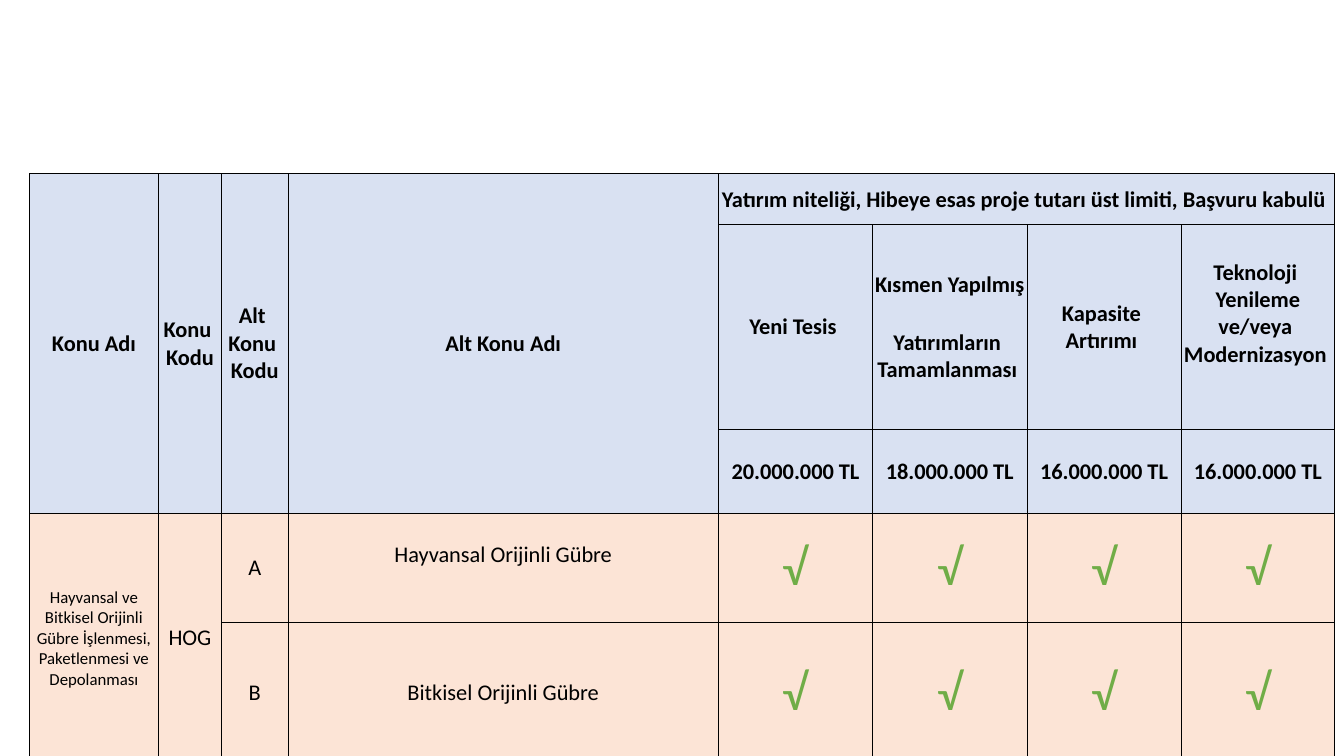
from lxml import etree
from pptx import Presentation
from pptx.dml.color import RGBColor
from pptx.enum.text import MSO_ANCHOR, PP_ALIGN
from pptx.oxml.ns import qn
from pptx.util import Pt

CENTER = PP_ALIGN.CENTER
MIDDLE = MSO_ANCHOR.MIDDLE

BLACK = RGBColor(0x00, 0x00, 0x00)
GREEN = RGBColor(0x70, 0xAD, 0x47)
HEADER_BLUE = RGBColor(0xD9, 0xE1, 0xF2)
BODY_PEACH = RGBColor(0xFC, 0xE4, 0xD6)

FONT = "Calibri"
CHECK = "√"
COLUMN_WIDTHS = [92.2, 45, 47.6, 307.4, 110.2, 110.2, 110.2, 109.6]
ROW_HEIGHTS = [36.5, 146, 60, 78.5, 100]
HEADER_ROWS = 3
FIRST_LIMIT_COLUMN = 4

TOPIC_HEADERS = ["Konu Adı", "Konu \vKodu", "Alt \vKonu \vKodu", "Alt Konu Adı"]
LIMITS_TITLE = "Yatırım niteliği, Hibeye esas proje tutarı üst limiti, Başvuru kabulü "
# Investment type, upper limit, bottom margin of the type cell
INVESTMENTS = [
    ("Yeni Tesis ", "20.000.000 TL", 0),
    ("Kısmen Yapılmış \vYatırımların \vTamamlanması ", "18.000.000 TL", 0),
    ("Kapasite \vArtırımı ", "16.000.000 TL", 0),
    ("Teknoloji \vYenileme ve/veya \vModernizasyon ", "16.000.000 TL", 19.5),
]
TOPIC_NAME = ("Hayvansal ve Bitkisel Orijinli Gübre İşlenmesi, "
              "Paketlenmesi ve Depolanması")
TOPIC_CODE = "HOG"
# Subtopic code, name, bottom margin of the name cell
SUBTOPICS = [
    ("A", "Hayvansal Orijinli Gübre", 20),
    ("B", "Bitkisel Orijinli Gübre", 0),
]


def add_borders(cell):
    properties = cell._tc.get_or_add_tcPr()
    for position, side in enumerate(("lnL", "lnR", "lnT", "lnB")):
        line = etree.Element(qn(f"a:{side}"), w=str(Pt(0.5)))
        fill = etree.SubElement(line, qn("a:solidFill"))
        etree.SubElement(fill, qn("a:srgbClr"), val=str(BLACK))
        properties.insert(position, line)


def style_cell(cell, fill_color):
    cell.fill.solid()
    cell.fill.fore_color.rgb = fill_color
    cell.vertical_anchor = MIDDLE
    cell.margin_left = cell.margin_right = cell.margin_top = Pt(0.72)
    cell.margin_bottom = 0
    add_borders(cell)


def write_cell(cell, text, size=16, bold=False, color=BLACK, bottom=0):
    cell.margin_bottom = Pt(bottom)
    paragraph = cell.text_frame.paragraphs[0]
    paragraph.text = text
    paragraph.alignment = CENTER
    for run in paragraph.runs:
        run.font.name = FONT
        run.font.size = Pt(size)
        run.font.bold = bold
        run.font.color.rgb = color


def add_grid(slide):
    frame = slide.shapes.add_table(
        len(ROW_HEIGHTS), len(COLUMN_WIDTHS), Pt(21), Pt(123.9),
        Pt(sum(COLUMN_WIDTHS)), Pt(sum(ROW_HEIGHTS)))
    table = frame.table
    table.first_row = table.horz_banding = False
    for column, width in zip(table.columns, COLUMN_WIDTHS):
        column.width = Pt(width)
    for index, (row, height) in enumerate(zip(table.rows, ROW_HEIGHTS)):
        row.height = Pt(height)
        for cell in row.cells:
            style_cell(cell, HEADER_BLUE if index < HEADER_ROWS else BODY_PEACH)
    return table


def fill_header(table):
    for column, title in enumerate(TOPIC_HEADERS):
        table.cell(0, column).merge(table.cell(HEADER_ROWS - 1, column))
        write_cell(table.cell(0, column), title, bold=True)
    limits = table.cell(0, FIRST_LIMIT_COLUMN)
    limits.merge(table.cell(0, len(COLUMN_WIDTHS) - 1))
    write_cell(limits, LIMITS_TITLE, bold=True)
    for column, (name, limit, bottom) in enumerate(INVESTMENTS, FIRST_LIMIT_COLUMN):
        write_cell(table.cell(1, column), name, bold=True, bottom=bottom)
        write_cell(table.cell(2, column), limit, bold=True)


def fill_body(table):
    for column, (text, size) in enumerate([(TOPIC_NAME, 12), (TOPIC_CODE, 16)]):
        topic = table.cell(HEADER_ROWS, column)
        topic.merge(table.cell(len(ROW_HEIGHTS) - 1, column))
        write_cell(topic, text, size)
    for row, (code, name, bottom) in enumerate(SUBTOPICS, HEADER_ROWS):
        write_cell(table.cell(row, 2), code)
        write_cell(table.cell(row, 3), name, bottom=bottom)
        for column in range(FIRST_LIMIT_COLUMN, len(COLUMN_WIDTHS)):
            write_cell(table.cell(row, column), CHECK, 36, color=GREEN)


def main():
    presentation = Presentation()
    presentation.slide_width = Pt(960)
    presentation.slide_height = Pt(540)
    slide = presentation.slides.add_slide(presentation.slide_layouts[6])

    # Table of topics and grant limits
    table = add_grid(slide)
    fill_header(table)
    fill_body(table)

    presentation.save("out.pptx")


if __name__ == "__main__":
    main()
